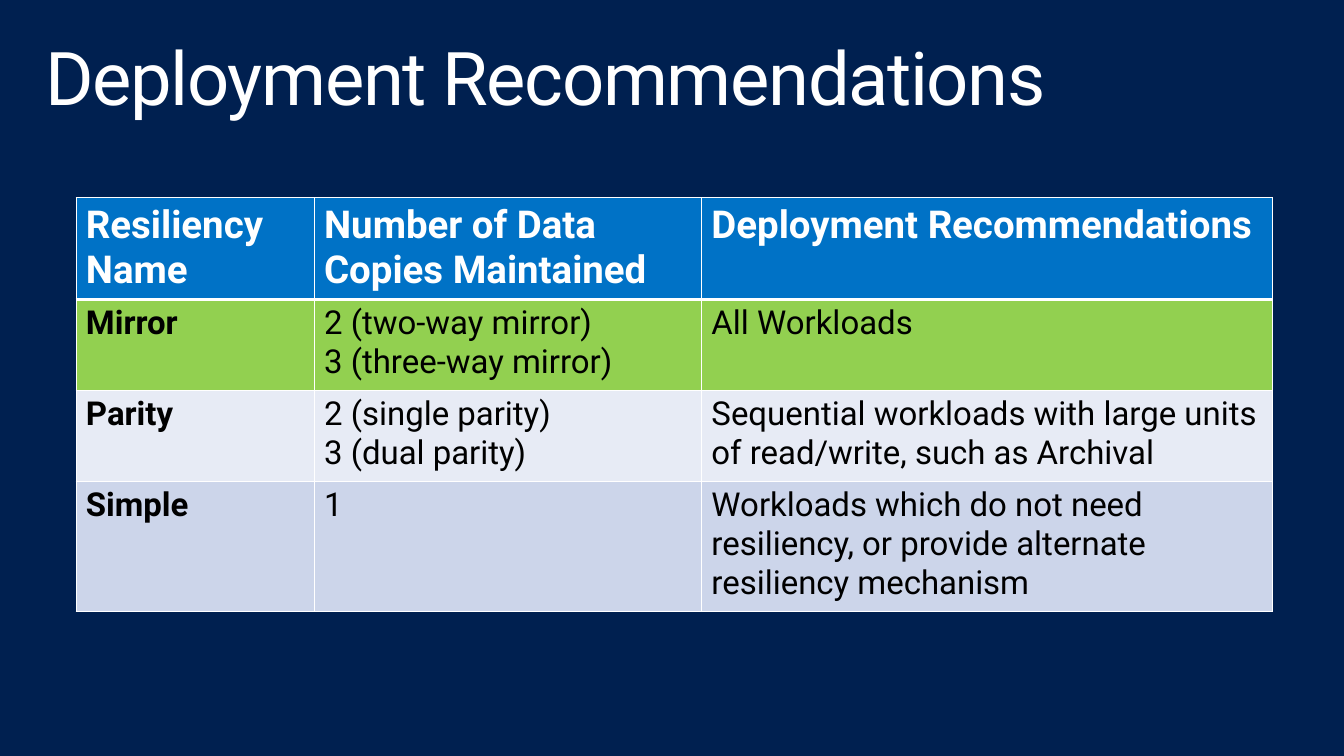
from lxml.etree import SubElement
from pptx import Presentation
from pptx.dml.color import RGBColor
from pptx.enum.text import MSO_ANCHOR, MSO_AUTO_SIZE, PP_ALIGN
from pptx.oxml.ns import qn
from pptx.util import Inches, Pt

FONT = "Roboto"
NAVY, BLUE, WHITE, BLACK = "002050", "0072C6", "FFFFFF", "000000"

COLUMN_WIDTHS = [2.41, 3.92, 5.78]
# Row height, fill and cell texts; the first row is the header
ROWS = [
    (1.03, BLUE, ["Resiliency Name", "Number of Data Copies Maintained",
                  "Deployment Recommendations"]),
    (0.92, "92D050", ["Mirror", "2 (two-way mirror)\n3 (three-way mirror)",
                      "All Workloads"]),
    (0.92, "E7EBF5", ["Parity", "2 (single parity)\n3 (dual parity)",
                      "Sequential workloads with large units of read/write, "
                      "such as Archival"]),
    (1.32, "CCD5EA", ["Simple", "1",
                      "Workloads which do not need resiliency, or provide "
                      "alternate resiliency mechanism"]),
]


def paint(fill, color):
    fill.solid()
    fill.fore_color.rgb = RGBColor.from_string(color)


def format_text(text_frame, size, color, bold=False):
    for para in text_frame.paragraphs:
        para.alignment = PP_ALIGN.LEFT
        for span in para.runs:
            span.font.name = FONT
            span.font.size = Pt(size)
            span.font.bold = bold
            span.font.color.rgb = RGBColor.from_string(color)


def add_borders(cell, color, widths):
    """Draw the cell's edges; widths are left, right, top and bottom points."""
    properties = cell._tc.get_or_add_tcPr()
    for position, (side, width) in enumerate(zip("LRTB", widths)):
        line = SubElement(properties, qn(f"a:ln{side}"), w=str(Pt(width)))
        solid = SubElement(line, qn("a:solidFill"))
        SubElement(solid, qn("a:srgbClr"), val=color)
        # Edges must come before the cell's fill
        properties.insert(position, line)


def add_title(page, text):
    title = page.shapes.title
    title.left, title.top = Inches(0.3), Inches(0.32)
    title.width, title.height = Inches(13), Inches(1)
    frame = title.text_frame
    frame.text = text
    frame.word_wrap = True
    frame.auto_size = MSO_AUTO_SIZE.NONE
    frame.vertical_anchor = MSO_ANCHOR.TOP
    frame.margin_left = frame.margin_right = Inches(0.16)
    frame.margin_top = frame.margin_bottom = Inches(0.1)
    format_text(frame, 54, WHITE)
    para = frame.paragraphs[0]
    para.line_spacing = 0.9
    # Tighten the letters by one point
    para.runs[0].font._element.set("spc", "-100")


def add_resiliency_table(page):
    table = page.shapes.add_table(
        len(ROWS), len(COLUMN_WIDTHS), Inches(0.77), Inches(2),
        Inches(12.1), Inches(4.19)).table
    for column, width in zip(table.columns, COLUMN_WIDTHS):
        column.width = Inches(width)
    for row_index, (height, fill, texts) in enumerate(ROWS):
        table.rows[row_index].height = Inches(height)
        header = row_index == 0
        # A thicker rule separates the header from the body
        top = 3 if row_index == 1 else 1
        bottom = 3 if header else 1
        for column_index, text in enumerate(texts):
            cell = table.cell(row_index, column_index)
            cell.text_frame.text = text
            format_text(cell.text_frame, 28 if header else 24,
                        WHITE if header else BLACK,
                        bold=header or column_index == 0)
            paint(cell.fill, fill)
            add_borders(cell, WHITE, (1, 1, top, bottom))


def main():
    deck = Presentation()
    deck.slide_width, deck.slide_height = Inches(13.6), Inches(7.65)
    page = deck.slides.add_slide(deck.slide_layouts.get_by_name("Title Only"))
    paint(page.background.fill, NAVY)
    add_title(page, "Deployment Recommendations")
    add_resiliency_table(page)
    deck.save("out.pptx")


if __name__ == "__main__":
    main()
